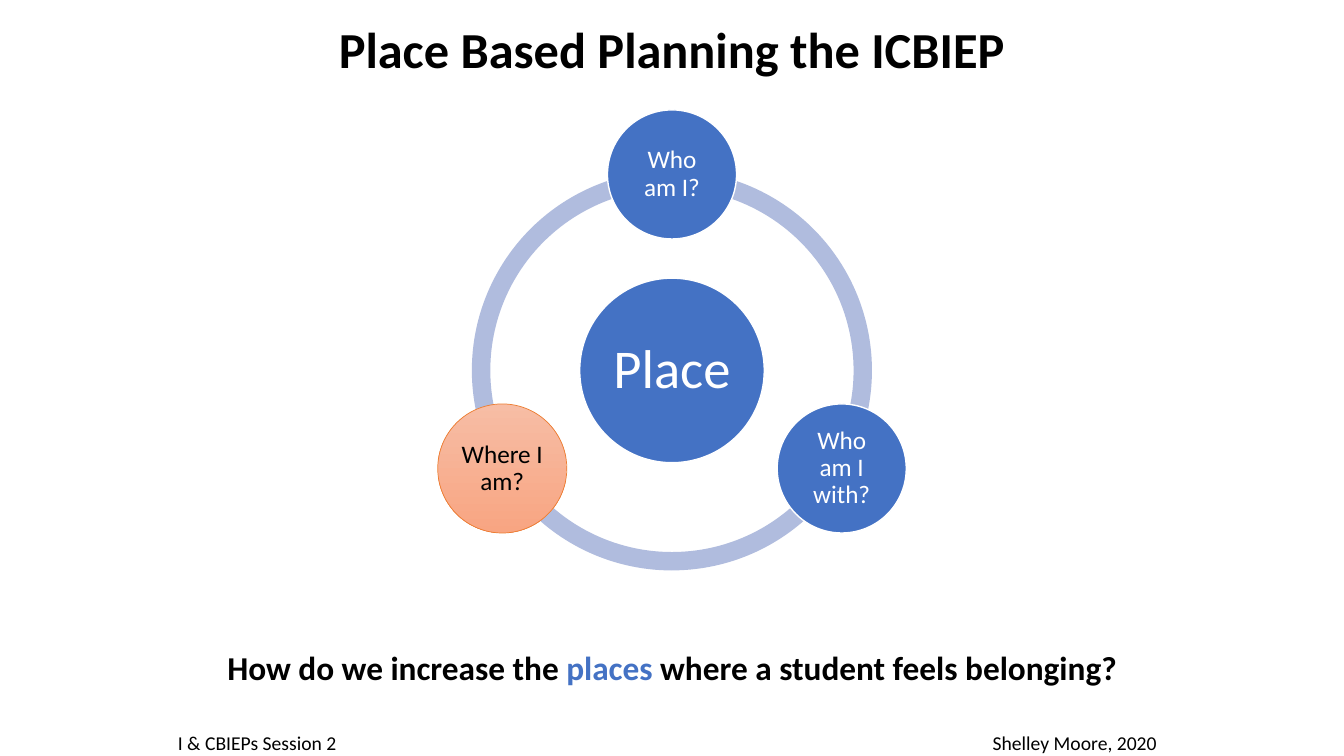
from dataclasses import dataclass
from math import cos, radians, sin
from typing import Any

from lxml.etree import SubElement
from pptx import Presentation
from pptx.dml.color import RGBColor
from pptx.enum.shapes import MSO_SHAPE
from pptx.enum.text import MSO_ANCHOR, MSO_AUTO_SIZE, PP_ALIGN
from pptx.oxml.ns import qn
from pptx.util import Pt


@dataclass(frozen=True)
class Theme:
    font: str = "Calibri"
    black: str = "000000"
    white: str = "FFFFFF"
    blue: str = "4472C4"
    ring: str = "B0BCDE"
    orange: str = "ED7D31"
    orange_light: str = "F7BDA5"
    orange_deep: str = "F8A582"
    title_size: float = 36
    hub_size: float = 39
    node_size: float = 18
    question_size: float = 23.8
    footer_size: float = 14


@dataclass(frozen=True)
class Box:
    left: float
    top: float
    width: float
    height: float

    def lengths(self) -> tuple[Pt, ...]:
        return tuple(Pt(v) for v in (self.left, self.top, self.width, self.height))


@dataclass(frozen=True)
class Circle:
    text: str
    x: float
    y: float
    diameter: float
    size: float
    inset: float
    highlighted: bool = False


@dataclass(frozen=True)
class Run:
    text: str
    color: str


THEME = Theme()
CENTER_X, CENTER_Y = 480, 264.6
RING_DIAMETER = 285.8
RING_THICKNESS = 0.046
ORBIT_RADIUS = 140
NODE_DIAMETER = 92.2
ARC_ANGLES = ((90, 162), (18, 90), (162, 18))
ADJUSTMENT_PER_DEGREE = 0.6
NODES = (("Who am I?", False), ("Who am I with?", False), ("Where I am?", True))
QUESTION = (
    Run("How do we increase the ", THEME.black),
    Run("places", THEME.blue),
    Run(" where a student feels belonging?", THEME.black),
)


def apply_format(target: Any, values: dict[str, Any]) -> None:
    for name, value in values.items():
        setattr(target, name, value)


def square_around(x: float, y: float, side: float) -> Box:
    return Box(x - side / 2, y - side / 2, side, side)


def write_line(shape: Any, runs: tuple[Run, ...], size: float, bold: bool = False,
               spacing: float = 0.9, alignment: PP_ALIGN = PP_ALIGN.CENTER,
               frame_format: dict[str, Any] | None = None) -> Any:
    """Fill the shape with one formatted paragraph and return that paragraph."""
    frame = shape.text_frame
    apply_format(frame, {
        "word_wrap": True,
        "auto_size": MSO_AUTO_SIZE.NONE,
        "vertical_anchor": MSO_ANCHOR.MIDDLE,
    } | (frame_format or {}))
    paragraph = frame.paragraphs[0]
    apply_format(paragraph, {"alignment": alignment, "line_spacing": spacing})
    for item in runs:
        run = paragraph.add_run()
        run.text = item.text
        apply_format(run.font, {"name": THEME.font, "size": Pt(size), "bold": bold})
        run.font.color.rgb = RGBColor.from_string(item.color)
    return paragraph


def add_solid_shape(slide: Any, kind: MSO_SHAPE, box: Box, color: str) -> Any:
    shape = slide.shapes.add_shape(kind, *box.lengths())
    shape.shadow.inherit = False
    shape.fill.solid()
    shape.fill.fore_color.rgb = RGBColor.from_string(color)
    shape.line.fill.background()
    return shape


def add_ring(slide: Any) -> None:
    box = square_around(CENTER_X, CENTER_Y, RING_DIAMETER)
    for start, end in ARC_ANGLES:
        arc = add_solid_shape(slide, MSO_SHAPE.BLOCK_ARC, box, THEME.ring)
        arc.adjustments[0] = start * ADJUSTMENT_PER_DEGREE
        arc.adjustments[1] = end * ADJUSTMENT_PER_DEGREE
        arc.adjustments[2] = RING_THICKNESS


def add_circle(slide: Any, circle: Circle) -> None:
    box = square_around(circle.x, circle.y, circle.diameter)
    shape = add_solid_shape(slide, MSO_SHAPE.OVAL, box, THEME.blue)
    text_color, line_color, line_width = THEME.white, THEME.white, 1
    if circle.highlighted:
        text_color, line_color, line_width = THEME.black, THEME.orange, 0.5
        shape.fill.gradient()
        shape.fill.gradient_angle = 270
        colors = (THEME.orange_light, THEME.orange_deep)
        for stop, color in zip(shape.fill.gradient_stops, colors):
            stop.color.rgb = RGBColor.from_string(color)
    shape.line.color.rgb = RGBColor.from_string(line_color)
    shape.line.width = Pt(line_width)
    sides = ("left", "top", "right", "bottom")
    insets = {f"margin_{side}": Pt(circle.inset) for side in sides}
    write_line(shape, (Run(circle.text, text_color),), circle.size, frame_format=insets)


def add_diagram(slide: Any) -> None:
    add_ring(slide)
    add_circle(slide, Circle("Place", CENTER_X, CENTER_Y, 131.8, THEME.hub_size, 3.9))
    for index, (text, highlighted) in enumerate(NODES):
        angle = radians(index * 360 / len(NODES) - 90)
        x = CENTER_X + ORBIT_RADIUS * cos(angle)
        y = CENTER_Y + ORBIT_RADIUS * sin(angle)
        add_circle(slide, Circle(text, x, y, NODE_DIAMETER, THEME.node_size, 1.8,
                                 highlighted))


def add_title(slide: Any) -> None:
    title = slide.shapes.title
    box = Box(137.4, 14.4, 685.2, 46)
    names = ("left", "top", "width", "height")
    apply_format(title, dict(zip(names, box.lengths())))
    runs = (Run("Place Based Planning the ICBIEP", THEME.black),)
    write_line(title, runs, THEME.title_size, bold=True)


def add_question(slide: Any) -> None:
    text_box = slide.shapes.add_textbox(*Box(137.4, 441.4, 685.2, 67).lengths())
    write_line(text_box, QUESTION, THEME.question_size, bold=True, spacing=1.1)


def add_footer(slide: Any) -> None:
    text_box = slide.shapes.add_textbox(*Box(120, 518.4, 720, 24.2).lengths())
    runs = (Run("I & CBIEPs Session 2\tShelley Moore, 2020", THEME.black),)
    paragraph = write_line(
        text_box, runs, THEME.footer_size, spacing=1.0, alignment=PP_ALIGN.LEFT,
        frame_format={"vertical_anchor": MSO_ANCHOR.TOP,
                      "auto_size": MSO_AUTO_SIZE.SHAPE_TO_FIT_TEXT})
    tabs = SubElement(paragraph._p.get_or_add_pPr(), qn("a:tabLst"))
    SubElement(tabs, qn("a:tab"), pos=str(Pt(582)), algn="l")


def main() -> None:
    presentation = Presentation()
    apply_format(presentation, {"slide_width": Pt(960), "slide_height": Pt(540)})
    slide = presentation.slides.add_slide(presentation.slide_layouts.get_by_name("Title Only"))
    add_title(slide)
    add_diagram(slide)
    add_question(slide)
    add_footer(slide)
    presentation.save("out.pptx")


if __name__ == "__main__":
    main()
